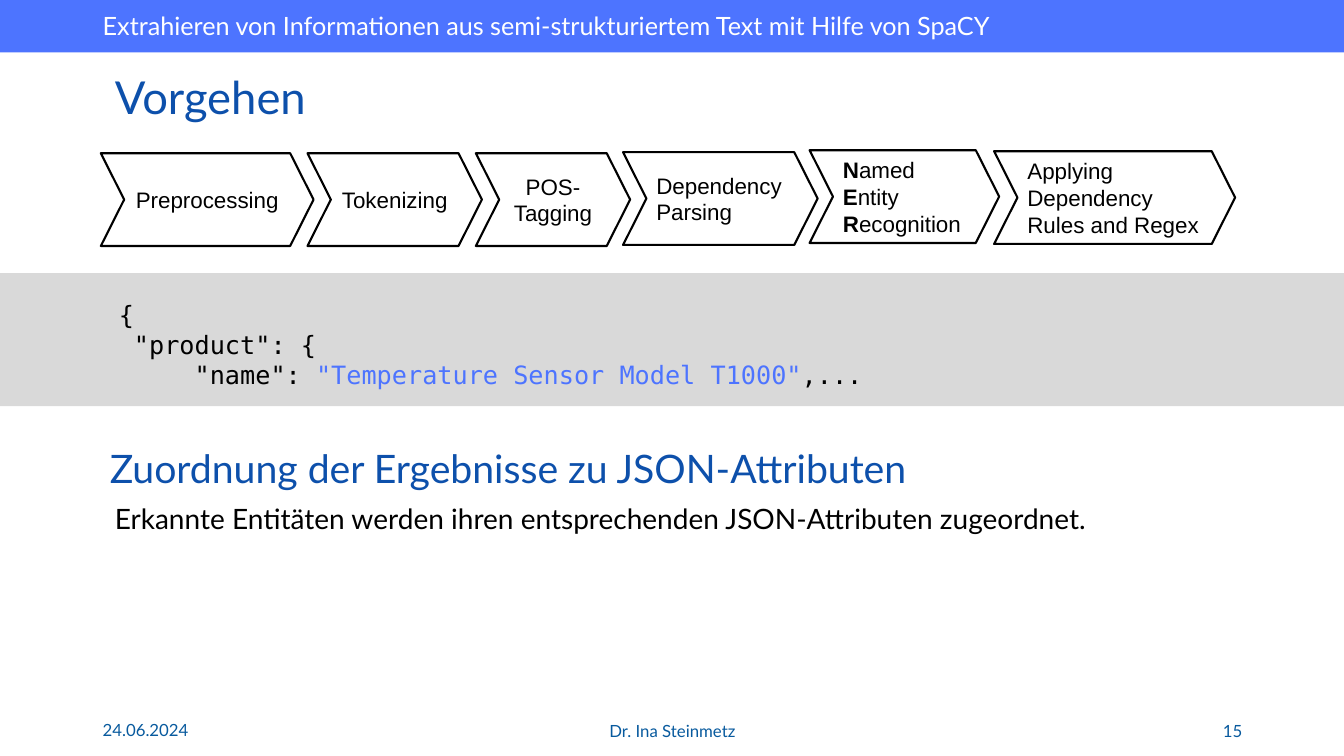
from pptx import Presentation
from pptx.dml.color import RGBColor
from pptx.enum.shapes import MSO_SHAPE
from pptx.enum.text import MSO_ANCHOR, MSO_AUTO_SIZE, PP_ALIGN
from pptx.util import Inches, Pt

LEFT, CENTER, RIGHT = PP_ALIGN.LEFT, PP_ALIGN.CENTER, PP_ALIGN.RIGHT
TOP, MIDDLE = MSO_ANCHOR.TOP, MSO_ANCHOR.MIDDLE
RECTANGLE, CHEVRON = MSO_SHAPE.RECTANGLE, MSO_SHAPE.CHEVRON

WIDTH, HEIGHT = 13.33, 7.5
COLORS = {"accent": "4D74FF", "heading": "0D50AB", "footer": "085A9E",
          "code_band": "D9D9D9", "black": "000000", "white": "FFFFFF"}

# Bands across the slide: top, height, colour
BANDS = [(0, 0.52, "accent"), (2.71, 1.32, "code_band")]

# Formats: font, size, colour
HEADER = ("Lato", 18, "white")
TITLE = ("Lato", 32.4, "heading")
SUBTITLE = ("Lato", 28, "heading")
BODY = ("Lato", 20, "black")
FOOTER = ("Lato", 12, "footer")
STEP = ("Arial", 16, "black")
CODE = ("DejaVu Sans Mono", 18, "black")

# Text boxes: box, lines of (text, bold, colour) runs, format, alignment, anchor
TEXTS = [
    ((0.92, 0.05, 11.05, 0.4),
     [["Extrahieren von Informationen aus semi-strukturiertem Text mit Hilfe von SpaCY"]],
     HEADER, LEFT, TOP),
    ((1.08, 2.92, 7.66, 1.01),
     [["{"],
      [' "product": {'],
      ['     "name": ', ('"Temperature Sensor Model T1000"', False, "accent"), ",..."]],
     CODE, LEFT, TOP),
    ((0.99, 4.36, 12.29, 0.57),
     [["Zuordnung der Ergebnisse zu JSON-Attributen"]], SUBTITLE, LEFT, TOP),
    ((1.04, 4.93, 11.74, 0.44),
     [["Erkannte Entitäten werden ihren entsprechenden JSON-Attributen zugeordnet."]],
     BODY, LEFT, TOP),
    ((0.92, 7.04, 3, 0.4), [["24.06.2024"]], FOOTER, LEFT, MIDDLE),
    ((4.42, 7.05, 4.5, 0.4), [["Dr. Ina Steinmetz"]], FOOTER, CENTER, MIDDLE),
    ((9.42, 7.05, 3, 0.4), [["15"]], FOOTER, RIGHT, MIDDLE),
]

# Process steps: left, top, width, runs, alignment, fill
STEP_HEIGHT, STEP_POINT = 0.92, 0.252
STEPS = [
    (1, 1.52, 2.11, ["Preprocessing"], CENTER, None),
    (3.05, 1.52, 1.73, ["Tokenizing"], CENTER, "white"),
    (4.72, 1.52, 1.53, ["POS-Tagging"], CENTER, "white"),
    (6.18, 1.51, 1.93, ["Dependency Parsing"], LEFT, "white"),
    (8.03, 1.49, 1.88,
     [("N", True, "black"), "amed ", ("E", True, "black"), "ntity ",
      ("R", True, "black"), "ecognition"], LEFT, None),
    (9.86, 1.5, 2.39, ["Applying Dependency Rules and Regex"], LEFT, None),
]


def rgb(name):
    return RGBColor.from_string(COLORS[name])


def inches(box):
    return [Inches(length) for length in box]


def write(frame, lines, text_format, align, anchor):
    """Fill a text frame with one paragraph, broken into the given lines."""
    font_name, size, default_color = text_format
    frame.word_wrap = True
    frame.auto_size = MSO_AUTO_SIZE.NONE
    frame.vertical_anchor = anchor
    paragraph = frame.paragraphs[0]
    paragraph.alignment = align
    for number, line in enumerate(lines):
        if number:
            paragraph.add_line_break()
        for part in line:
            text, bold, color = (part, False, default_color) if isinstance(part, str) else part
            run = paragraph.add_run()
            run.text = text
            for attribute, value in {"name": font_name, "size": Pt(size), "bold": bold}.items():
                setattr(run.font, attribute, value)
            run.font.color.rgb = rgb(color)


def add_panel(slide, preset, box, fill, outline=None):
    panel = slide.shapes.add_shape(preset, *inches(box))
    panel.shadow.inherit = False
    if fill:
        panel.fill.solid()
        panel.fill.fore_color.rgb = rgb(fill)
    else:
        panel.fill.background()
    if outline:
        panel.line.color.rgb = rgb(outline)
        panel.line.width = Pt(1.5)
    else:
        panel.line.fill.background()
    return panel


def main():
    deck = Presentation()
    deck.slide_width, deck.slide_height = inches((WIDTH, HEIGHT))
    slide = deck.slides.add_slide(deck.slide_layouts.get_by_name("Title Only"))

    title = slide.shapes.title
    title.left, title.top, title.width, title.height = inches((1.04, 0.71, 3.14, 0.57))
    write(title.text_frame, [["Vorgehen"]], TITLE, LEFT, MIDDLE)
    title.text_frame.paragraphs[0].line_spacing = 0.9

    for top, height, color in BANDS:
        add_panel(slide, RECTANGLE, (0, top, WIDTH, height), color)

    for left, top, width, runs, align, fill in STEPS:
        step = add_panel(slide, CHEVRON, (left, top, width, STEP_HEIGHT), fill, "black")
        step.adjustments[0] = STEP_POINT
        write(step.text_frame, [runs], STEP, align, MIDDLE)

    for box, lines, text_format, align, anchor in TEXTS:
        textbox = slide.shapes.add_textbox(*inches(box))
        write(textbox.text_frame, lines, text_format, align, anchor)

    deck.save("out.pptx")


if __name__ == "__main__":
    main()
